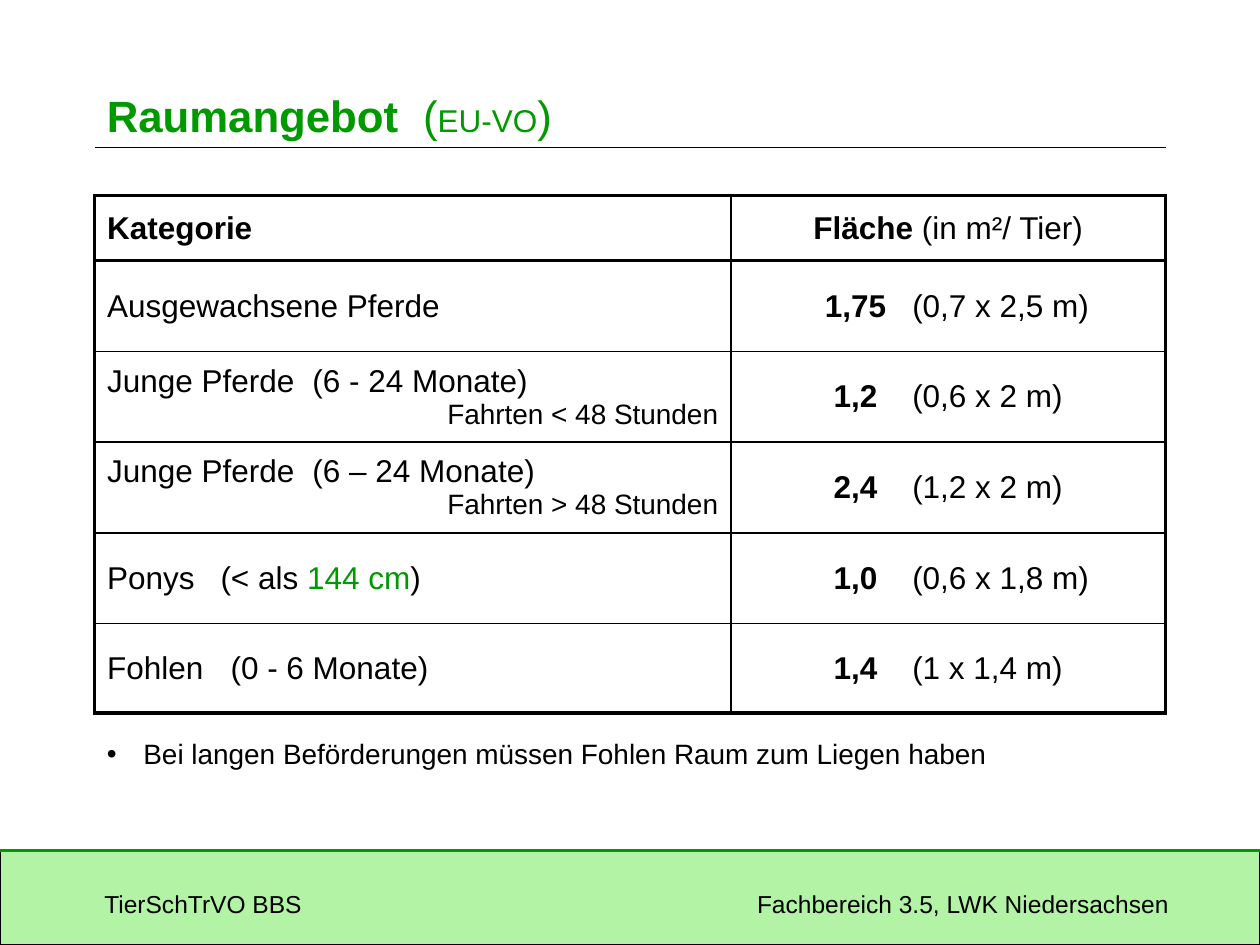
"""Build the slide on space allowances for transported horses."""
from lxml.etree import SubElement
from pptx import Presentation
from pptx.dml.color import RGBColor
from pptx.enum.shapes import MSO_CONNECTOR, MSO_SHAPE
from pptx.enum.text import MSO_ANCHOR as Anchor, PP_ALIGN as Align
from pptx.oxml.ns import qn
from pptx.util import Inches, Pt

COLORS = {"text": "000000", "green": "009900", "band": "B3F3A6", "paper": "FFFFFF"}
FONT = "Arial"
THIN, THICK = 1, 2.25
COLUMNS = [5.05, 3.45]
ROWS = [0.52, 0.72, 0.72, 0.72, 0.72, 0.71]
VALUE_TABS = [(0.89, "ctr"), (1.34, "l")]

TITLE = [("Raumangebot", 25, True, "green"), ("\t(", 25, False, "green"),
         ("EU-VO", 18, False, "green"), (")", 25, False, "green")]
HEADINGS = [[("Kategorie", 18, True)], [("Fläche", 18, True), (" (in m²/ Tier)", 18)]]
CATEGORIES = [
    {"runs": [("Ausgewachsene Pferde", 18)], "area": "1,75", "size": "(0,7 x 2,5 m)"},
    {"runs": [("Junge Pferde\t(6 - 24 Monate)", 18)], "tab": 1.63,
     "trip": "Fahrten < 48 Stunden", "area": "1,2", "size": "(0,6 x 2 m)"},
    {"runs": [("Junge Pferde\t(6 – 24 Monate)", 18)], "tab": 1.63,
     "trip": "Fahrten > 48 Stunden", "area": "2,4", "size": "(1,2 x 2 m)"},
    {"runs": [("Ponys\t(< als ", 18), ("144 cm", 18, False, "green"), (")", 18)],
     "tab": 0.9, "area": "1,0", "size": "(0,6 x 1,8 m)"},
    {"runs": [("Fohlen\t(0 - 6 Monate)", 18)], "tab": 0.98,
     "area": "1,4", "size": "(1 x 1,4 m)"},
]
NOTE = "Bei langen Beförderungen müssen Fohlen Raum zum Liegen haben"
FOOTER = "TierSchTrVO BBS\tFachbereich 3.5, LWK Niedersachsen"


def rgb(name):
    return RGBColor.from_string(COLORS[name])


def write(paragraph, runs, align=Align.LEFT, tabs=()):
    paragraph.alignment = align
    if tabs:
        stops = SubElement(paragraph._p.get_or_add_pPr(), qn("a:tabLst"))
        for position, kind in tabs:
            SubElement(stops, qn("a:tab"), pos=str(Inches(position)), algn=kind)
    for text, size, bold, color in ((*run, False, "text")[:4] if len(run) == 2
                                    else (*run, "text")[:4] for run in runs):
        run = paragraph.add_run()
        run.text = text
        run.font.name, run.font.size, run.font.bold = FONT, Pt(size), bold
        run.font.color.rgb = rgb(color)


def add_text(slide, box, anchor=Anchor.TOP):
    frame = slide.shapes.add_textbox(*map(Inches, box)).text_frame
    frame.word_wrap = True
    frame.vertical_anchor = anchor
    return frame.paragraphs[0]


def add_rule(slide, left, right, y, color, width):
    rule = slide.shapes.add_connector(
        MSO_CONNECTOR.STRAIGHT, Inches(left), Inches(y), Inches(right), Inches(y))
    rule.line.color.rgb = rgb(color)
    rule.line.width = Pt(width)
    SubElement(rule._element.spPr, qn("a:effectLst"))


def style_cell(cell, row, column):
    cell.vertical_anchor = Anchor.MIDDLE
    props = cell._tc.get_or_add_tcPr()
    heavy = {"lnL": column == 0, "lnR": column == len(COLUMNS) - 1,
             "lnT": row < 2, "lnB": row in (0, len(ROWS) - 1)}
    for side, is_heavy in heavy.items():
        line = SubElement(props, qn(f"a:{side}"), w=str(Pt(THICK if is_heavy else THIN)))
        SubElement(SubElement(line, qn("a:solidFill")), qn("a:srgbClr"), val=COLORS["text"])
    cell.fill.solid()
    cell.fill.fore_color.rgb = rgb("paper")


def add_space_table(slide):
    table = slide.shapes.add_table(
        len(ROWS), len(COLUMNS), Inches(0.75), Inches(1.55),
        Inches(sum(COLUMNS)), Inches(sum(ROWS))).table
    for column, width in zip(table.columns, COLUMNS):
        column.width = Inches(width)
    for row, height in zip(table.rows, ROWS):
        row.height = Inches(height)
    for r in range(len(ROWS)):
        for c in range(len(COLUMNS)):
            style_cell(table.cell(r, c), r, c)
    for c, (runs, align) in enumerate(zip(HEADINGS, (Align.LEFT, Align.CENTER))):
        write(table.cell(0, c).text_frame.paragraphs[0], runs, align)
    for r, category in enumerate(CATEGORIES, 1):
        kind, space = (table.cell(r, c).text_frame for c in range(2))
        tabs = [(category["tab"], "l")] if "tab" in category else ()
        write(kind.paragraphs[0], category["runs"], tabs=tabs)
        if "trip" in category:
            write(kind.add_paragraph(), [(category["trip"], 16)], Align.RIGHT)
        write(space.paragraphs[0],
              [("\t" + category["area"], 18, True), ("\t" + category["size"], 18)],
              tabs=VALUE_TABS)


def main():
    prs = Presentation()
    prs.slide_width, prs.slide_height = Inches(10), Inches(7.5)
    slide = prs.slides.add_slide(prs.slide_layouts[6])

    band = slide.shapes.add_shape(
        MSO_SHAPE.RECTANGLE, Inches(0), Inches(6.75), Inches(10), Inches(0.75))
    band.shadow.inherit = False
    band.fill.solid()
    band.fill.fore_color.rgb = rgb("band")
    band.line.color.rgb = rgb("text")
    band.line.width = Pt(0.75)
    add_rule(slide, 0.75, 9.25, 1.17, "text", 1)
    add_rule(slide, 0, 10, 6.75, "green", 2)

    write(add_text(slide, (0.73, 7.01, 8.7, 0.33)), [(FOOTER, 14)], tabs=[(8.45, "r")])
    write(add_text(slide, (0.75, 0.36, 8.5, 1.1), Anchor.MIDDLE), TITLE, tabs=[(2.51, "l")])
    add_space_table(slide)

    note = add_text(slide, (0.75, 5.8, 8.66, 0.4))
    props = note._p.get_or_add_pPr()
    props.set("marL", str(Inches(0.29)))
    props.set("indent", str(-Inches(0.29)))
    SubElement(props, qn("a:buFont"), typeface=FONT)
    SubElement(props, qn("a:buChar"), char="•")
    write(note, [(NOTE, 16)])

    prs.save("out.pptx")


if __name__ == "__main__":
    main()
